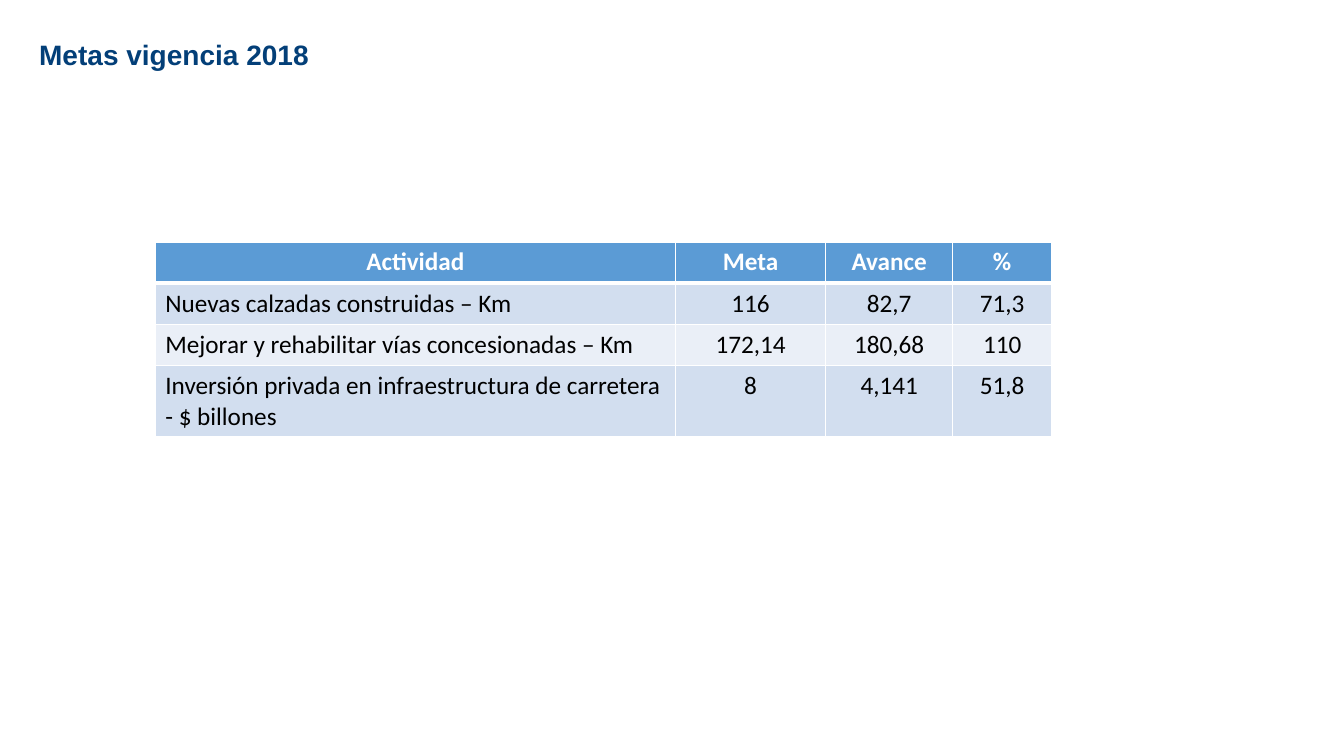
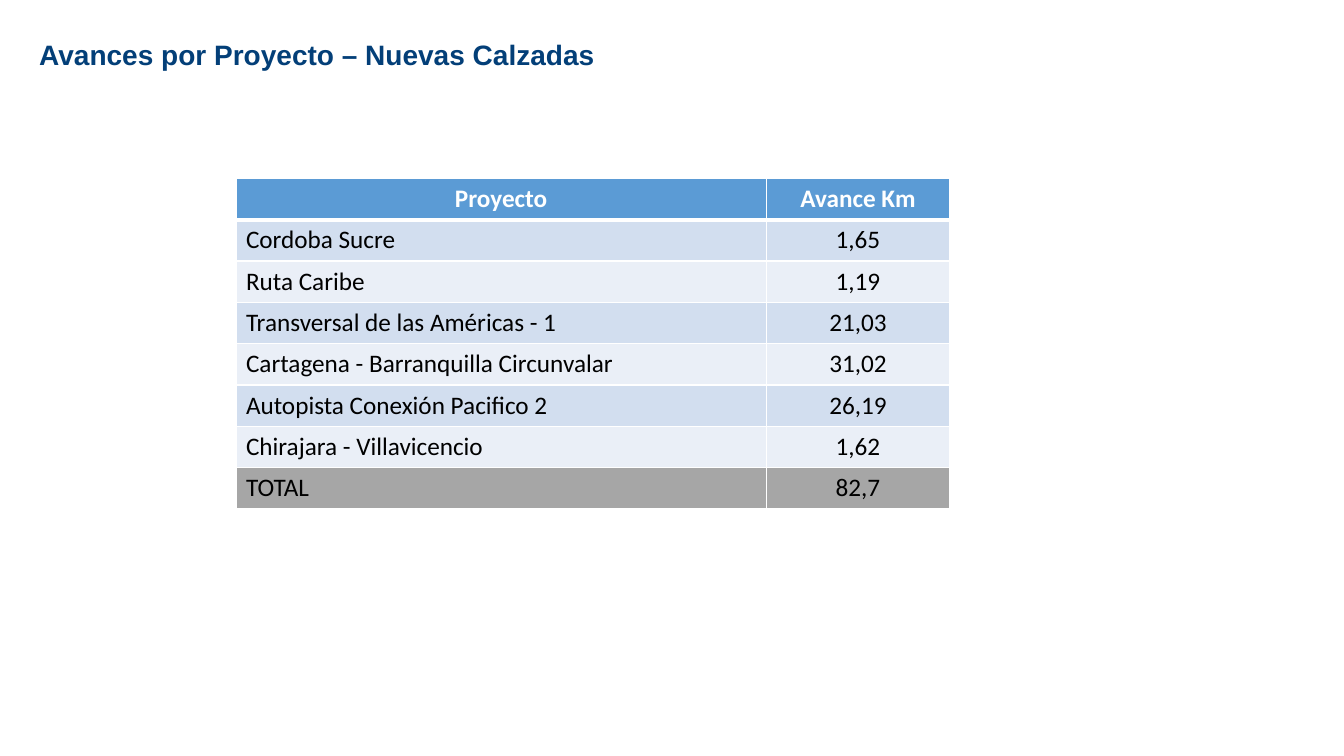
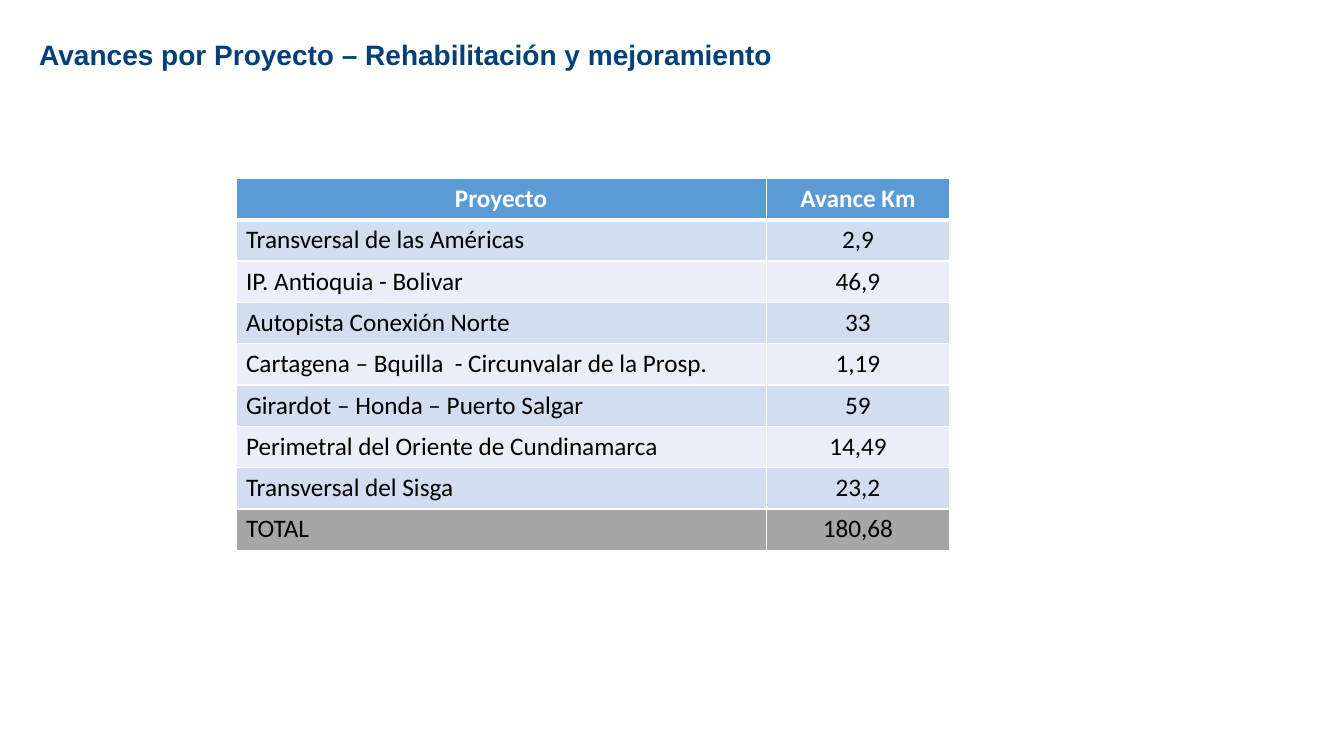
from lxml import etree
from pptx import Presentation
from pptx.dml.color import RGBColor
from pptx.enum import text
from pptx.oxml import ns
from pptx.util import Inches, Pt

COLORS = {
    "title": "033F78",
    "header": "5B9BD5",
    "odd": "D2DEEF",
    "even": "EAEFF7",
    "total": "A6A6A6",
    "white": "FFFFFF",
    "black": "000000",
}
ROW_HEIGHT = 0.41
PROJECT_HEADER = ("Proyecto", "Avance Km")

GOALS = [
    ("Actividad", "Meta", "Avance", "%"),
    ("Nuevas calzadas construidas – Km", "116", "82,7", "71,3"),
    ("Mejorar y rehabilitar vías concesionadas – Km", "172,14", "180,68", "110"),
    ("Inversión privada en infraestructura de carretera - $ billones", "8", "4,141", "51,8"),
]
NEW_ROADS = [
    PROJECT_HEADER,
    ("Cordoba Sucre", "1,65"),
    ("Ruta Caribe", "1,19"),
    ("Transversal de las Américas - 1", "21,03"),
    ("Cartagena - Barranquilla Circunvalar", "31,02"),
    ("Autopista Conexión Pacifico 2", "26,19"),
    ("Chirajara - Villavicencio", "1,62"),
    ("TOTAL", "82,7"),
]
REHABILITATION = [
    PROJECT_HEADER,
    ("Transversal de las Américas", "2,9"),
    ("IP. Antioquia - Bolivar", "46,9"),
    ("Autopista Conexión Norte", "33"),
    ("Cartagena – Bquilla  - Circunvalar de la Prosp.", "1,19"),
    ("Girardot – Honda – Puerto Salgar", "59"),
    ("Perimetral del Oriente de Cundinamarca", "14,49"),
    ("Transversal del Sisga", "23,2"),
    ("TOTAL", "180,68"),
]


def color(name):
    return RGBColor.from_string(COLORS[name])


def style_font(paragraph, face, size, color_name, bold):
    font = paragraph.font
    font.name, font.size, font.bold = face, Pt(size), bold
    font.color.rgb = color(color_name)


def add_title(slide, wording, width):
    title = slide.shapes.add_textbox(Inches(0.29), Inches(0.32), Inches(width), Inches(0.44))
    frame = title.text_frame
    frame.word_wrap = True
    frame.auto_size = text.MSO_AUTO_SIZE.SHAPE_TO_FIT_TEXT
    frame.text = wording
    style_font(frame.paragraphs[0], "Arial", 20, "title", True)


def set_borders(cell, top, bottom):
    properties = cell._tc.get_or_add_tcPr()
    for side, width in (("L", 1), ("R", 1), ("T", top), ("B", bottom)):
        line = etree.SubElement(properties, ns.qn(f"a:ln{side}"), w=str(Pt(width)))
        fill = etree.SubElement(line, ns.qn("a:solidFill"))
        etree.SubElement(fill, ns.qn("a:srgbClr"), val=COLORS["white"])


def row_fill(index, label):
    if index == 0:
        return "header"
    if label == "TOTAL":
        return "total"
    return "odd" if index % 2 else "even"


def fill_cell(cell, value, row, column, fill):
    header = row == 0
    set_borders(cell, 3 if row == 1 else 1, 3 if header else 1)
    cell.fill.solid()
    cell.fill.fore_color.rgb = color(fill)
    cell.text = value
    paragraph = cell.text_frame.paragraphs[0]
    if header or column:
        paragraph.alignment = text.PP_ALIGN.CENTER
    style_font(paragraph, "Calibri", 18, "white" if header else "black", header)


def add_progress_table(slide, left, top, widths, records, last_height=ROW_HEIGHT):
    heights = [ROW_HEIGHT] * (len(records) - 1) + [last_height]
    table = slide.shapes.add_table(
        len(records), len(widths), Inches(left), Inches(top),
        Inches(sum(widths)), Inches(sum(heights))).table
    for column, width in zip(table.columns, widths):
        column.width = Inches(width)
    for row, (record, height) in enumerate(zip(records, heights)):
        table.rows[row].height = Inches(height)
        fill = row_fill(row, record[0])
        for column, value in enumerate(record):
            fill_cell(table.cell(row, column), value, row, column, fill)


def main():
    deck = Presentation()
    deck.slide_width, deck.slide_height = Inches(13.33), Inches(7.5)
    blank = deck.slide_layouts[6]

    goals = deck.slides.add_slide(blank)
    add_title(goals, "Metas vigencia 2018", 7.3)
    add_progress_table(goals, 1.54, 2.4, (5.16, 1.49, 1.26, 0.98), GOALS, 0.68)

    for topic, title_width, records in (
        ("Nuevas Calzadas", 7.3, NEW_ROADS),
        ("Rehabilitación y mejoramiento", 8.19, REHABILITATION),
    ):
        progress = deck.slides.add_slide(blank)
        add_title(progress, f"Avances por Proyecto – {topic}", title_width)
        add_progress_table(progress, 2.34, 1.77, (5.26, 1.82), records)

    deck.save("out.pptx")


if __name__ == "__main__":
    main()
